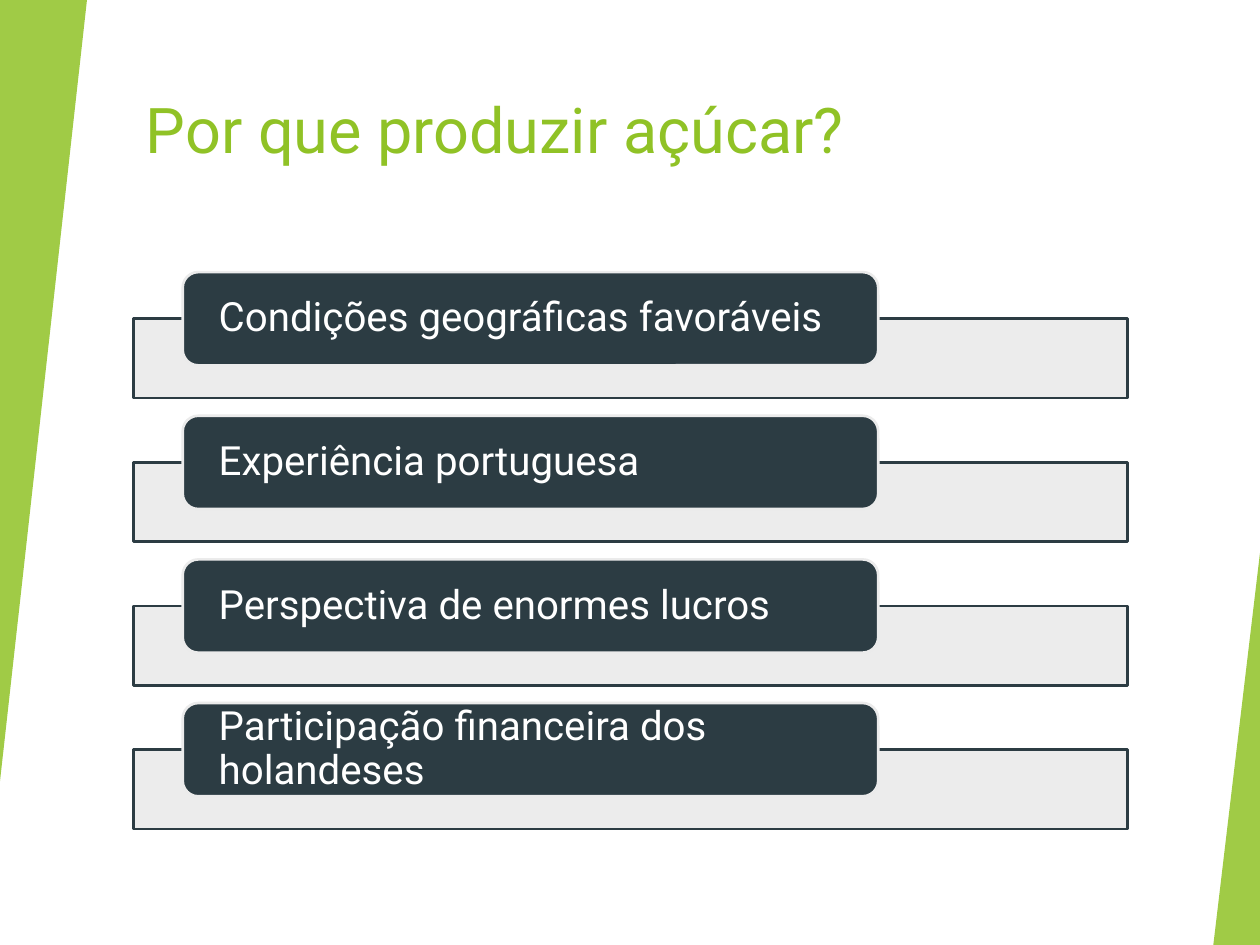
from lxml.etree import SubElement
from pptx import Presentation
from pptx.dml.color import RGBColor
from pptx.enum.shapes import MSO_SHAPE
from pptx.enum.text import MSO_ANCHOR, PP_ALIGN
from pptx.oxml.ns import qn
from pptx.util import Inches, Pt

COLORS = {"green": "90C226", "dark": "2C3C43", "light": "EBEBEB", "white": "FFFFFF"}
REASONS = [
    "Condições geográficas favoráveis",
    "Experiência portuguesa",
    "Perspectiva de enormes lucros",
    "Participação financeira dos holandeses",
]
FIRST_TOP, ROW_STEP = 2.16, 1.14


class Painter:
    """Holds the style and the current slide."""

    font = "Roboto"

    def __init__(self, page):
        self.page = page

    def color(self, name):
        return RGBColor.from_string(COLORS[name])

    def shape(self, kind, left, top, width, height, fill, line=None, opacity=100):
        shape = self.page.shapes.add_shape(
            kind, Inches(left), Inches(top), Inches(width), Inches(height))
        shape.shadow.inherit = False
        shape.fill.solid()
        shape.fill.fore_color.rgb = self.color(fill)
        if opacity < 100:
            solid_fill = shape.element.spPr.find(qn("a:solidFill"))
            SubElement(solid_fill[0], qn("a:alpha"), val=str(opacity * 1000))
        if line:
            shape.line.color.rgb = self.color(line)
            shape.line.width = Pt(1.5)
        else:
            shape.line.fill.background()
        return shape

    def triangle(self, left, top, width, height, rotation=0):
        shape = self.shape(MSO_SHAPE.ISOSCELES_TRIANGLE, left, top, width, height,
                           "green", opacity=85)
        shape.adjustments[0] = 1
        shape.rotation = rotation

    def set_text(self, box, text, size, color):
        frame = box.text_frame
        frame.word_wrap = True
        frame.text = text
        para = frame.paragraphs[0]
        para.alignment = PP_ALIGN.LEFT
        for span in para.runs:
            span.font.name = self.font
            span.font.size = Pt(size)
            span.font.color.rgb = self.color(color)
        return frame

    def title(self, text):
        box = self.page.shapes.add_textbox(
            Inches(1.06), Inches(0.67), Inches(8.36), Inches(1.2))
        self.set_text(box, text, 36, "green")

    def bar(self, top):
        self.shape(MSO_SHAPE.RECTANGLE, 1.06, top, 7.89, 0.63, "light", "dark", 90)

    def label(self, text, top):
        box = self.shape(MSO_SHAPE.ROUNDED_RECTANGLE, 1.45, top, 5.52, 0.74,
                         "dark", "light")
        frame = self.set_text(box, text, 23, "white")
        frame.vertical_anchor = MSO_ANCHOR.MIDDLE
        frame.margin_left = frame.margin_right = Inches(0.25)
        frame.margin_top = frame.margin_bottom = 0
        frame.paragraphs[0].line_spacing = 0.9


def main():
    deck = Presentation()
    deck.slide_width, deck.slide_height = Inches(10), Inches(7.5)
    painter = Painter(deck.slides.add_slide(deck.slide_layouts[6]))

    # Title and side wedges
    painter.title("Por que produzir açúcar?")
    painter.triangle(0, 0, 0.69, 6.2, rotation=180)
    painter.triangle(9.63, 4.39, 0.37, 3.11)

    # One bar with its label for each reason
    for index, reason in enumerate(REASONS):
        top = FIRST_TOP + index * ROW_STEP
        painter.bar(top + 0.37)
        painter.label(reason, top)

    deck.save("out.pptx")


if __name__ == "__main__":
    main()
